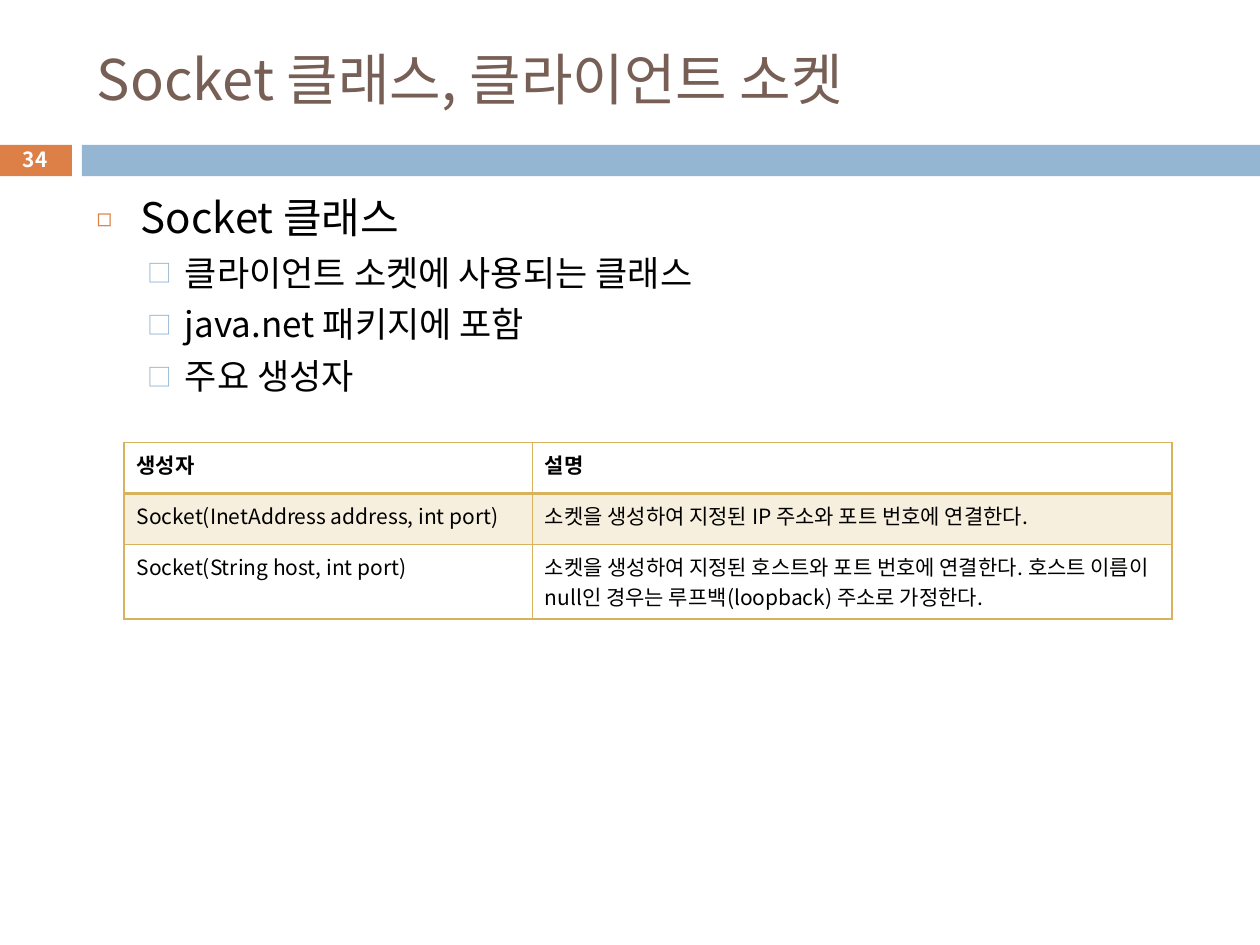
from lxml.etree import SubElement
from pptx import Presentation
from pptx.dml.color import RGBColor
from pptx.enum.shapes import MSO_SHAPE
from pptx.enum.text import MSO_ANCHOR, PP_ALIGN
from pptx.oxml.ns import qn
from pptx.util import Cm, Pt

FONT = "Noto Sans CJK KR"
BLACK, WHITE, BROWN = "000000", "FFFFFF", "775F55"
ORANGE, BLUE, GOLD = "DD8047", "94B6D2", "D8B25C"

TITLE = "Socket 클래스, 클라이언트 소켓"
PAGE = "34"
LEVELS = [
    dict(size=24, indent=0.89, hang=0.89, before=7, bullet="◻", color=ORANGE, scale=60),
    dict(size=20, indent=1.78, hang=0.76, before=5.5, bullet="□", color=BLUE, scale=70),
]
OUTLINE = [
    (0, "Socket 클래스"),
    (1, "클라이언트 소켓에 사용되는 클래스"),
    (1, "java.net 패키지에 포함"),
    (1, "주요 생성자"),
]
CONSTRUCTORS = [
    ("생성자", "설명"),
    ("Socket(InetAddress address, int port) ",
     "소켓을 생성하여 지정된 IP 주소와 포트 번호에 연결한다."),
    ("Socket(String host, int port)",
     "소켓을 생성하여 지정된 호스트와 포트 번호에 연결한다. 호스트 이름이 null인 경우는 "
     "루프백(loopback) 주소로 가정한다."),
]
COLUMN_WIDTHS = (8.23, 12.9)
ROW_HEIGHTS = (1.03, 1.03, 1.5)


def rgb(color):
    return RGBColor.from_string(color)


def add_run(paragraph, text, size, color, bold=False):
    run = paragraph.add_run()
    run.text = text
    run.font.name = FONT
    run.font.size = Pt(size)
    run.font.bold = bold
    run.font.color.rgb = rgb(color)
    SubElement(run.font._element, qn("a:ea"), typeface=FONT)


def add_band(slide, left, width, color):
    band = slide.shapes.add_shape(
        MSO_SHAPE.RECTANGLE, Cm(left), Cm(2.92), Cm(width), Cm(0.63))
    band.shadow.inherit = False
    band.fill.solid()
    band.fill.fore_color.rgb = rgb(color)
    band.line.fill.background()


def add_text_box(slide, left, top, width, height):
    box = slide.shapes.add_textbox(Cm(left), Cm(top), Cm(width), Cm(height))
    box.text_frame.word_wrap = True
    return box.text_frame


def set_bullet(paragraph, level):
    properties = paragraph._p.get_or_add_pPr()
    properties.set("marL", str(Cm(level["indent"])))
    properties.set("indent", str(-Cm(level["hang"])))
    bullet_color = SubElement(properties, qn("a:buClr"))
    SubElement(bullet_color, qn("a:srgbClr"), val=level["color"])
    SubElement(properties, qn("a:buSzPct"), val=str(level["scale"] * 1000))
    SubElement(properties, qn("a:buFont"), typeface=FONT)
    SubElement(properties, qn("a:buChar"), char=level["bullet"])


def add_outline(slide):
    frame = add_text_box(slide, 1.7, 3.73, 22.66, 14)
    for number, (depth, text) in enumerate(OUTLINE):
        level = LEVELS[depth]
        paragraph = frame.add_paragraph() if number else frame.paragraphs[0]
        paragraph.level = depth
        paragraph.space_before = Pt(level["before"])
        set_bullet(paragraph, level)
        add_run(paragraph, text, level["size"], BLACK)


def set_borders(cell, widths):
    properties = cell._tc.get_or_add_tcPr()
    for position, (side, width) in enumerate(widths.items()):
        border = properties.makeelement(qn("a:" + side), {"w": str(Pt(width))})
        fill = SubElement(border, qn("a:solidFill"))
        SubElement(fill, qn("a:srgbClr"), val=GOLD)
        properties.insert(position, border)


def fill_cell(cell, tinted):
    if not tinted:
        cell.fill.background()
        return
    cell.fill.solid()
    cell.fill.fore_color.rgb = rgb(GOLD)
    tint = cell._tc.tcPr.find(".//" + qn("a:srgbClr"))
    SubElement(tint, qn("a:alpha"), val="20000")


def add_constructors(slide):
    table = slide.shapes.add_table(
        len(CONSTRUCTORS), len(COLUMN_WIDTHS), Cm(2.5), Cm(8.92),
        Cm(sum(COLUMN_WIDTHS)), Cm(sum(ROW_HEIGHTS))).table
    table.horz_banding = False
    for column, width in zip(table.columns, COLUMN_WIDTHS):
        column.width = Cm(width)
    for r, texts in enumerate(CONSTRUCTORS):
        table.rows[r].height = Cm(ROW_HEIGHTS[r])
        for c, text in enumerate(texts):
            cell = table.cell(r, c)
            fill_cell(cell, tinted=r == 1)
            set_borders(cell, {"lnL": 1, "lnR": 1,
                               "lnT": 2 if r == 1 else 1,
                               "lnB": 2 if r == 0 else 1})
            add_run(cell.text_frame.paragraphs[0], text, 12, BLACK, bold=r == 0)


def main():
    deck = Presentation()
    deck.slide_width, deck.slide_height = Cm(25.4), Cm(19.05)
    slide = deck.slides.add_slide(deck.slide_layouts[5])

    add_band(slide, -0.03, 1.48, ORANGE)
    add_band(slide, 1.65, 23.75, BLUE)

    title = slide.shapes.title
    title.left, title.top, title.width, title.height = Cm(1.7), Cm(0.64), Cm(22.66), Cm(1.88)
    title.text_frame.vertical_anchor = MSO_ANCHOR.MIDDLE
    heading = title.text_frame.paragraphs[0]
    heading.alignment = PP_ALIGN.LEFT
    add_run(heading, TITLE, 32, BROWN)

    add_outline(slide)
    add_constructors(slide)

    page_frame = add_text_box(slide, -0.03, 2.87, 1.48, 0.69)
    page_frame.margin_top = page_frame.margin_bottom = 0
    page_frame.vertical_anchor = MSO_ANCHOR.MIDDLE
    page_frame.paragraphs[0].alignment = PP_ALIGN.CENTER
    add_run(page_frame.paragraphs[0], PAGE, 11.9, WHITE, bold=True)

    deck.save("out.pptx")


if __name__ == "__main__":
    main()
